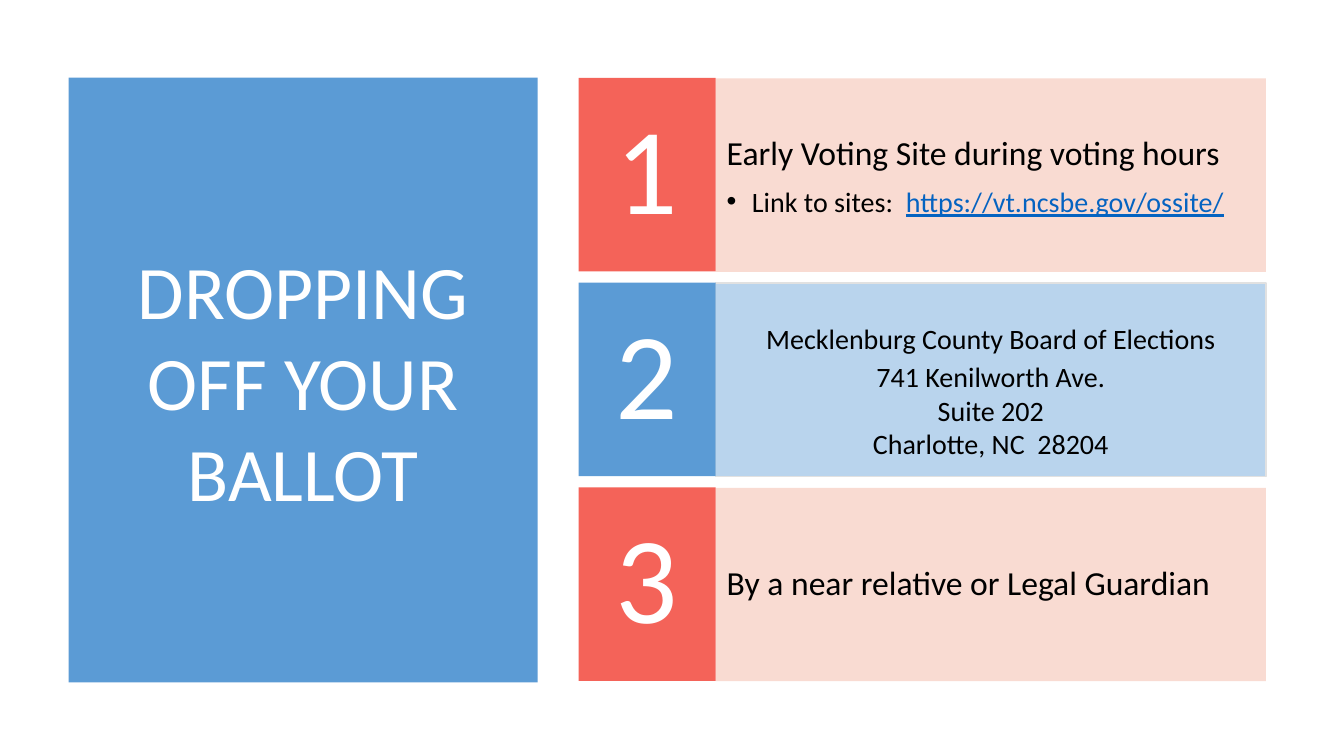
from lxml import etree
from pptx import Presentation
from pptx import util as u
from pptx.dml.color import RGBColor
from pptx.enum import text as t
from pptx.enum import shapes as s
from pptx.oxml.ns import qn

Pt = u.Pt
BLUE = RGBColor(0x5B, 0x9B, 0xD5)
SKY = RGBColor(0xB9, 0xD4, 0xED)
CORAL = RGBColor(0xF4, 0x63, 0x59)
PINK = RGBColor(0xF9, 0xDB, 0xD2)
GREY = RGBColor(0xE1, 0xE1, 0xE1)
LINK = RGBColor(0x05, 0x63, 0xC1)
WHITE = RGBColor(0xFF, 0xFF, 0xFF)
BLACK = RGBColor(0, 0, 0)

LEFT, MID = t.PP_ALIGN.LEFT, t.PP_ALIGN.CENTER


def put(obj, vals):
    for name, val in vals.items():
        setattr(obj, name, val)


class Deck:
    face = "Calibri"

    def __init__(self):
        self.prs = Presentation()
        put(self.prs, {"slide_width": Pt(960), "slide_height": Pt(540)})
        self.slide = self.prs.slides.add_slide(self.prs.slide_layouts[5])

    def frame(self, shape, side, top, base, anchor=t.MSO_ANCHOR.MIDDLE):
        put(shape.text_frame, {
            "word_wrap": True, "auto_size": t.MSO_AUTO_SIZE.NONE,
            "vertical_anchor": anchor,
            "margin_left": Pt(side), "margin_right": Pt(side),
            "margin_top": Pt(top), "margin_bottom": Pt(base)})

    def paint(self, shape, color):
        shape.fill.solid()
        shape.fill.fore_color.rgb = color

    def title(self, words, box, color):
        shape = self.slide.shapes.title
        put(shape, dict(zip(("left", "top", "width", "height"), map(Pt, box))))
        self.paint(shape, color)
        self.frame(shape, 7.2, 3.6, 3.6)
        self.para(shape, 0, [(words, WHITE)], 54, MID)

    def rect(self, box, color, edge=None):
        shape = self.slide.shapes.add_shape(s.MSO_SHAPE.RECTANGLE, *map(Pt, box))
        shape.shadow.inherit = False
        self.paint(shape, color)
        if edge:
            shape.line.color.rgb = edge
            shape.line.width = Pt(1)
        else:
            shape.line.fill.background()
        return shape

    def para(self, shape, num, runs, size, align, lead=1.0, after=0, dot=False):
        body = shape.text_frame
        par = body.add_paragraph() if num else body.paragraphs[0]
        put(par, {"alignment": align, "line_spacing": lead,
                  "space_before": Pt(0), "space_after": Pt(after)})
        for words, color in runs:
            run = par.add_run()
            run.text = words
            put(run.font, {"name": self.face, "size": Pt(size),
                           "underline": color == LINK})
            run.font.color.rgb = color
        if dot:
            props = par._p.get_or_add_pPr()
            props.set("marL", str(Pt(18)))
            props.set("indent", str(-Pt(18)))
            etree.SubElement(props, qn("a:buFont")).set("typeface", "Arial")
            etree.SubElement(props, qn("a:buChar")).set("char", "•")


def main():
    deck = Deck()

    # Title panel
    deck.title("DROPPING OFF YOUR BALLOT", (49, 55.5, 335, 432), BLUE)

    # Each row: colours, edge, top inset, anchor, paragraphs
    middle, top = t.MSO_ANCHOR.MIDDLE, t.MSO_ANCHOR.TOP
    rows = [
        (CORAL, PINK, None, 35, middle, [
            ([("Early Voting Site during voting hours", BLACK)],
             24, LEFT, 1.0, 8.4),
            ([("Link to sites:  ", BLACK),
              ("https://vt.ncsbe.gov/ossite/", LINK)],
             20, LEFT, 1.0, 3, True)]),
        (BLUE, SKY, GREY, 30, top, [
            ([("Mecklenburg County Board of Elections", BLACK)],
             20, MID, 0.9, 3),
            ([("741 Kenilworth Ave.", BLACK)], 20, MID),
            ([("Suite 202", BLACK)], 20, MID),
            ([("Charlotte, NC  28204", BLACK)], 20, MID)]),
        (CORAL, PINK, None, 35, middle, [
            ([("By a near relative or Legal Guardian", BLACK)],
             24, LEFT, 0.9)]),
    ]

    # Numbered rows
    for i, (dark, pale, edge, inset, anchor, paras) in enumerate(rows):
        y = 56 + 146.2 * i
        card = deck.rect((511.2, y, 393.1, 138.2), pale, edge)
        deck.frame(card, 7.9, inset, 35 if anchor == middle else 0, anchor)
        for num, args in enumerate(paras):
            deck.para(card, num, *args)
        tile = deck.rect((413.3, y - 0.3, 97.9, 138.2), dark)
        deck.frame(tile, 5, 13.7, 13.7)
        deck.para(tile, 0, [(str(i + 1), WHITE)], 88, MID, 0.9)

    deck.prs.save("out.pptx")


if __name__ == "__main__":
    main()
